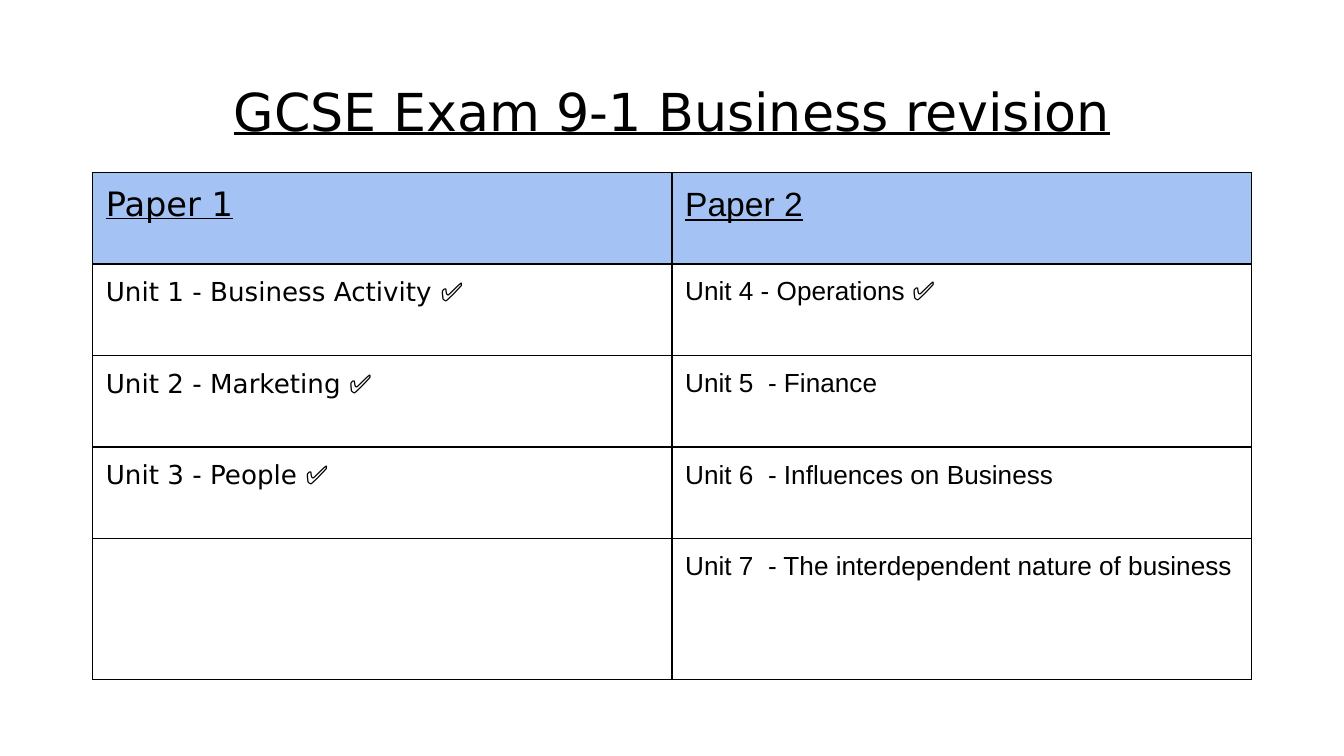
from lxml import etree
from pptx import Presentation
from pptx import util as u
from pptx.dml.color import RGBColor
from pptx.enum import text
from pptx.oxml import ns

COLORS = {"ink": "000000", "header": "A4C2F4"}
FONTS = ["DejaVu Sans", "Arial"]
INSET = u.Cm(0.25)
ROWS = [
    ("Paper 1", "Paper 2"),
    ("Unit 1 - Business Activity ✅", "Unit 4 - Operations ✅"),
    ("Unit 2 - Marketing ✅", "Unit 5  - Finance"),
    ("Unit 3 - People ✅", "Unit 6  - Influences on Business"),
    ("", "Unit 7  - The interdependent nature of business"),
]


def style(p, size, name, underline):
    """Set the font of a whole paragraph."""
    f = p.font
    f.size, f.name, f.underline, f.bold = u.Pt(size), name, underline, False
    f.color.rgb = RGBColor.from_string(COLORS["ink"])


def set_insets(box):
    """Give a cell or text frame equal margins on all sides."""
    box.margin_left = box.margin_right = INSET
    box.margin_top = box.margin_bottom = INSET


def add_borders(cell):
    """Draw a thin line on every side of a cell."""
    tcPr = cell._tc.get_or_add_tcPr()
    for side in ("lnL", "lnR", "lnT", "lnB"):
        ln = etree.SubElement(tcPr, ns.qn(f"a:{side}"), w=str(u.Pt(0.75)))
        fill = etree.SubElement(ln, ns.qn("a:solidFill"))
        etree.SubElement(fill, ns.qn("a:srgbClr"), val=COLORS["ink"])


def place_title(s, left, top, width, height):
    """Place the slide title in the given box."""
    sp = s.shapes.title
    sp.left, sp.top, sp.width, sp.height = left, top, width, height
    tf = sp.text_frame
    tf.text = "GCSE Exam 9-1 Business revision"
    tf.auto_size = text.MSO_AUTO_SIZE.NONE
    tf.vertical_anchor = text.MSO_ANCHOR.TOP
    set_insets(tf)
    p = tf.paragraphs[0]
    p.alignment = text.PP_ALIGN.CENTER
    style(p, 28, FONTS[0], True)


def place_units(s, left, top, width, height):
    """Place the table of papers and units, with a taller last row."""
    tbl = s.shapes.add_table(len(ROWS), 2, left, top, width, height).table
    tbl.first_row = tbl.horz_banding = False
    row_height = u.Cm(1.73)
    for row in tbl.rows:
        row.height = row_height
    tbl.rows[len(ROWS) - 1].height = height - row_height * (len(ROWS) - 1)
    for i, values in enumerate(ROWS):
        for j, value in enumerate(values):
            cell = tbl.cell(i, j)
            set_insets(cell)
            add_borders(cell)
            if i == 0:
                cell.fill.solid()
                cell.fill.fore_color.rgb = RGBColor.from_string(COLORS["header"])
            else:
                cell.fill.background()
            cell.text = value
            style(cell.text_frame.paragraphs[0], 14 if i else 18, FONTS[j], i == 0)


def main():
    """Build the revision overview slide."""
    prs = Presentation()
    prs.slide_width, prs.slide_height = u.Cm(25.4), u.Cm(14.29)
    s = prs.slides.add_slide(prs.slide_layouts[5])
    place_title(s, u.Cm(0.86), u.Cm(1.24), u.Cm(23.67), u.Cm(1.6))
    place_units(s, u.Cm(1.75), u.Cm(3.26), u.Cm(21.9), u.Cm(9.58))
    prs.save("out.pptx")


if __name__ == "__main__":
    main()
